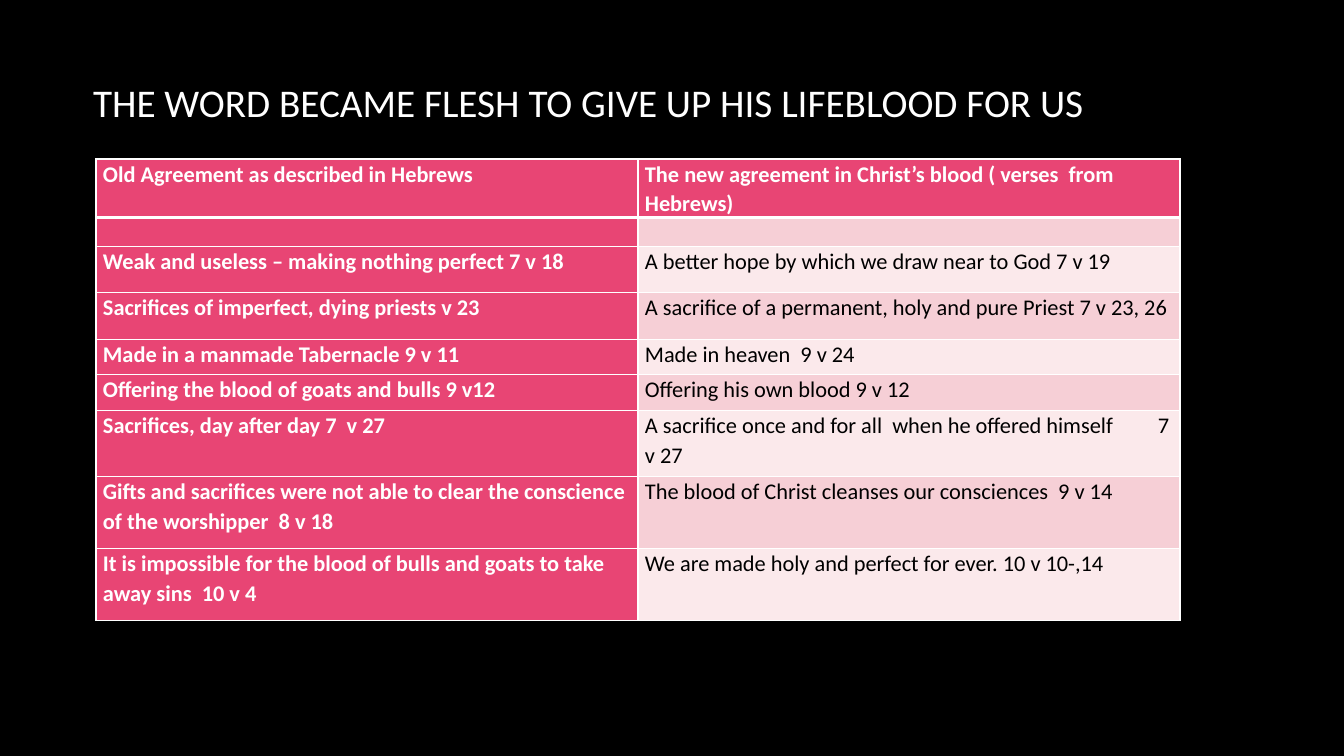
from dataclasses import dataclass

from lxml.etree import SubElement
from pptx import Presentation
from pptx.dml.color import RGBColor as RGB
from pptx.enum.text import MSO_ANCHOR, PP_ALIGN
from pptx.oxml.ns import qn
from pptx.util import Pt

TITLE = "THE WORD BECAME FLESH TO GIVE UP HIS LIFEBLOOD FOR US"
# (row height in px, old agreement, new agreement)
ROWS = [
    (58, "Old Agreement as described in Hebrews",
     "The new agreement in Christ’s blood ( verses  from Hebrews)"),
    (29, "", ""),
    (46, "Weak and useless – making nothing perfect 7 v 18",
     "A better hope by which we draw near to God 7 v 19"),
    (47, "Sacrifices of imperfect, dying priests v 23",
     "A sacrifice of a permanent, holy and pure Priest 7 v 23, 26"),
    (35, "Made in a manmade Tabernacle 9 v 11", "Made in heaven  9 v 24"),
    (36, "Offering the blood of goats and bulls 9 v12",
     "Offering his own blood 9 v 12"),
    (66, "Sacrifices, day after day 7  v 27",
     "A sacrifice once and for all  when he offered himself\t7 v 27"),
    (72, "Gifts and sacrifices were not able to clear the conscience of the worshipper  8 v 18",
     "The blood of Christ cleanses our consciences  9 v 14"),
    (72, "It is impossible for the blood of bulls and goats to take away sins  10 v 4",
     "We are made holy and perfect for ever. 10 v 10-,14"),
]
TITLE_BOX = (83, 22, 1199, 160)
TABLE_LEFT, TABLE_TOP, COL_WIDTH = 96, 159, 542
CELL_INSET, VERSE_TAB = 7, 513


@dataclass(frozen=True)
class Theme:
    font: str = "Calibri"
    title_size: int = 28
    cell_size: int = 16
    background: str = "000000"
    light: str = "FFFFFF"
    dark: str = "000000"
    accent: str = "E84574"
    bands: tuple = ("FBE9EB", "F6CFD6")


THEME = Theme()


def px(n):
    return round(n * 914400 / 100.8)


def set_font(font, size, color, bold=False):
    values = {"name": THEME.font, "size": Pt(size), "bold": bold}
    for name, value in values.items():
        setattr(font, name, value)
    font.color.rgb = RGB.from_string(color)


def set_borders(cell, top, bottom):
    """Draw light cell borders; top and bottom are widths in points."""
    tc_pr = cell._tc.get_or_add_tcPr()
    for side, width in {"L": 1, "R": 1, "T": top, "B": bottom}.items():
        ln = SubElement(tc_pr, qn(f"a:ln{side}"), w=str(Pt(width)))
        fill = SubElement(ln, qn("a:solidFill"))
        SubElement(fill, qn("a:srgbClr"), val=THEME.light)


def fill_cell(cell, text, row, col):
    strong = row == 0 or col == 0
    set_borders(cell, 3 if row == 1 else 1, 3 if row == 0 else 1)
    cell.fill.solid()
    cell.fill.fore_color.rgb = RGB.from_string(
        THEME.accent if strong else THEME.bands[row % 2])
    layout = {"margin_left": px(CELL_INSET), "margin_right": px(CELL_INSET),
              "margin_top": 0, "margin_bottom": 0,
              "vertical_anchor": MSO_ANCHOR.TOP}
    for name, value in layout.items():
        setattr(cell, name, value)

    p = cell.text_frame.paragraphs[0]
    p.line_spacing = 1.07
    if "\t" in text:
        tabs = SubElement(p._p.get_or_add_pPr(), qn("a:tabLst"))
        SubElement(tabs, qn("a:tab"), pos=str(px(VERSE_TAB)), algn="l")
    if text:
        r = p.add_run()
        r.text = text
        set_font(r.font, THEME.cell_size, THEME.light if strong else THEME.dark, strong)
    else:
        SubElement(p._p, qn("a:endParaRPr"), sz=str(THEME.cell_size * 100))


def add_title(s):
    title = s.shapes.title
    title.left, title.top, title.width, title.height = map(px, TITLE_BOX)
    tf = title.text_frame
    tf.vertical_anchor = MSO_ANCHOR.MIDDLE
    p = tf.paragraphs[0]
    p.alignment = PP_ALIGN.LEFT
    r = p.add_run()
    r.text = TITLE
    set_font(r.font, THEME.title_size, THEME.light)


def add_agreements(s):
    height = sum(row[0] for row in ROWS)
    table = s.shapes.add_table(len(ROWS), 2, px(TABLE_LEFT), px(TABLE_TOP),
                               px(2 * COL_WIDTH), px(height)).table
    for column in table.columns:
        column.width = px(COL_WIDTH)
    for i, (row_height, *texts) in enumerate(ROWS):
        table.rows[i].height = px(row_height)
        for j, text in enumerate(texts):
            fill_cell(table.cell(i, j), text, i, j)


def main():
    prs = Presentation()
    prs.slide_width, prs.slide_height = px(1344), px(756)
    s = prs.slides.add_slide(prs.slide_layouts[5])
    s.background.fill.solid()
    s.background.fill.fore_color.rgb = RGB.from_string(THEME.background)
    add_title(s)
    add_agreements(s)
    prs.save("out.pptx")


if __name__ == "__main__":
    main()
